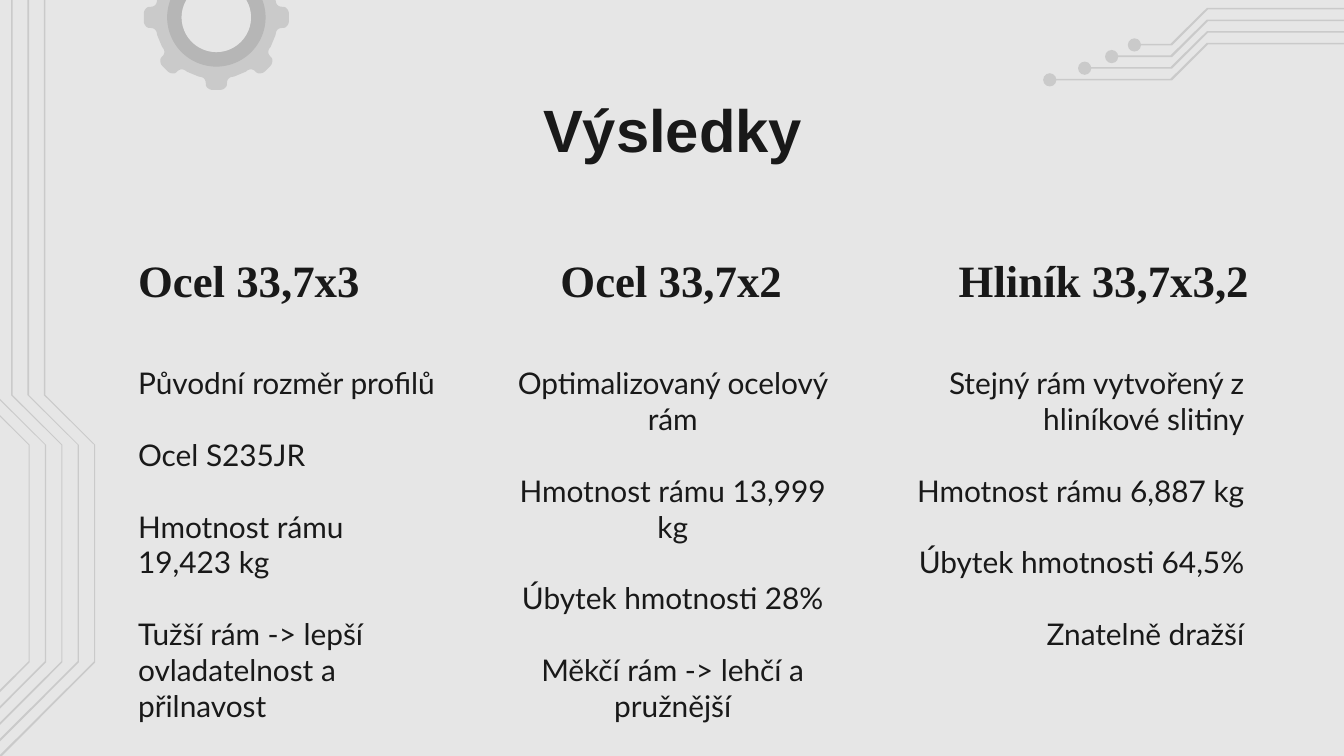
import math

import pptx
import pptx.dml.color
import pptx.enum.shapes
import pptx.enum.text
import pptx.oxml
import pptx.oxml.ns
import pptx.util

Cm, Pt = pptx.util.Cm, pptx.util.Pt
SHAPE = pptx.enum.shapes.MSO_SHAPE
ALIGN = pptx.enum.text.PP_ALIGN
ANCHOR = pptx.enum.text.MSO_ANCHOR

COLORS = {"background": "E6E6E6", "line": "CACACA", "ring": "B6B6B6", "text": "191919"}

# Content
TITLE = "Výsledky"
COLUMNS = [
    {"align": ALIGN.LEFT, "heading": "Ocel 33,7x3",
     "heading_x": (2.36, 6.17), "list_box": (2.36, 6.17, 6.96),
     "items": ["Původní rozměr profilů", "Ocel S235JR", "Hmotnost rámu 19,423 kg",
               "Tužší rám -> lepší ovladatelnost a přilnavost"]},
    {"align": ALIGN.CENTER, "heading": "Ocel 33,7x2",
     "heading_x": (9.6, 6.17), "list_box": (9.25, 6.93, 7.26),
     "items": ["Optimalizovaný ocelový rám", "Hmotnost rámu 13,999 kg",
               "Úbytek hmotnosti 28%", "Měkčí rám -> lehčí a pružnější"]},
    {"align": ALIGN.RIGHT, "heading": "Hliník 33,7x3,2",
     "heading_x": (16.84, 7.01), "list_box": (16.84, 6.93, 6.96),
     "items": ["Stejný rám vytvořený z hliníkové slitiny", "Hmotnost rámu 6,887 kg",
               "Úbytek hmotnosti 64,5%", "Znatelně dražší"]},
]
HEADING_Y, HEADING_H, LIST_Y = 3.96, 2.08, 6.65

# Circuit traces, in cm: start and end of each top trace, outline of the rightmost left trace
TOP_TRACES = [(21.44, 25.43), (21.01, 25.55), (20.5, 25.81), (19.84, 26.07)]
TOP_Y, TOP_STEP, DOT = 0.15, 0.22, 0.25
LEFT_TRACE = [(1.8, 8.41), (0.86, 7.47), (0.86, -6.15), (0.83, -6.15), (0.83, 7.47),
              (1.78, 8.41), (1.78, 12.5), (-0.33, 14.6), (-0.33, 19.76), (-0.3, 19.76),
              (-0.3, 14.63), (1.8, 12.52)]
LEFT_COUNT, LEFT_STEP = 5, 0.31

# Gear, in cm: Bézier curves of the left half of the top tooth, from the centre
GEAR_X, GEAR_Y, GEAR_TEETH, HOLE_R, RING_R = 4.09, 0.33, 8, 0.66, 0.93
HALF_TOOTH = [[(-0.33, -1.12), (-0.25, -1.12), (-0.2, -1.17), (-0.2, -1.24)],
              [(-0.2, -1.27), (-0.2, -1.32), (-0.13, -1.37), (-0.08, -1.37)]]


def rgb(name):
    return pptx.dml.color.RGBColor.from_string(COLORS[name])


def paint(sp, color):
    sp.shadow.inherit = False
    sp.fill.solid()
    sp.fill.fore_color.rgb = rgb(color)
    sp.line.fill.background()


def add_outline(shapes, contours, color):
    """Draw one filled shape from closed contours given in cm."""
    points = [[(Cm(x), Cm(y)) for x, y in contour] for contour in contours]
    builder = shapes.build_freeform(*points[0][0])
    builder.add_line_segments(points[0][1:], close=True)
    for contour in points[1:]:
        builder.move_to(*contour[0])
        builder.add_line_segments(contour[1:], close=True)
    paint(builder.convert_to_shape(), color)


def bezier(curve, steps=6):
    for i in range(steps + 1):
        t = i / steps
        weights = ((1 - t) ** 3, 3 * t * (1 - t) ** 2, 3 * t * t * (1 - t), t ** 3)
        yield tuple(sum(w * p[axis] for w, p in zip(weights, curve)) for axis in (0, 1))


def gear_contours():
    half = [point for curve in HALF_TOOTH for point in bezier(curve)]
    tooth = half + [(-x, y) for x, y in reversed(half)]
    outer = []
    for k in range(GEAR_TEETH):
        c, s = math.cos(math.tau * k / GEAR_TEETH), math.sin(math.tau * k / GEAR_TEETH)
        outer += [(GEAR_X + x * c - y * s, GEAR_Y + x * s + y * c) for x, y in tooth]
    angles = [-math.tau * k / 72 for k in range(72)]
    hole = [(GEAR_X + HOLE_R * math.cos(a), GEAR_Y + HOLE_R * math.sin(a)) for a in angles]
    return [outer, hole]


def fill_text(sp, box, lines, align, anchor, font, size, bold=False, gap=0):
    sp.left, sp.top, sp.width, sp.height = (Cm(v) for v in box)
    tf = sp.text_frame
    tf.word_wrap = True
    tf.auto_size = pptx.enum.text.MSO_AUTO_SIZE.NONE
    tf.vertical_anchor = anchor
    tf.margin_left = tf.margin_right = tf.margin_top = tf.margin_bottom = Cm(0.25)
    tf.text = "\n".join(lines)
    for i, p in enumerate(tf.paragraphs):
        pPr = p._p.get_or_add_pPr()
        pPr.set("marL", "0")
        pPr.set("indent", "0")
        pPr.append(pptx.oxml.parse_xml(f'<a:buNone {pptx.oxml.ns.nsdecls("a")}/>'))
        p.alignment = align
        p.space_before = Pt(gap if i else 0)
        for r in p.runs:
            r.font.name, r.font.size, r.font.bold = font, Pt(size), bold
            r.font.color.rgb = rgb("text")


def main():
    prs = pptx.Presentation()
    prs.slide_width, prs.slide_height = Cm(25.4), Cm(14.29)
    s = prs.slides.add_slide(prs.slide_layouts.get_by_name("Comparison"))
    s.background.fill.solid()
    s.background.fill.fore_color.rgb = rgb("background")

    # Top right traces with end dots
    for i, (start, end) in enumerate(TOP_TRACES):
        y = TOP_Y + i * TOP_STEP
        add_outline(s.shapes, [[(22.81, y), (22.12, y + 0.68), (start, y + 0.68),
                                (start, y + 0.71), (22.15, y + 0.71), (22.83, y + 0.03),
                                (end, y + 0.03), (end, y)]], "line")
        dot = s.shapes.add_shape(SHAPE.OVAL, Cm(start - DOT / 2), Cm(y + 0.7 - DOT / 2),
                                 Cm(DOT), Cm(DOT))
        paint(dot, "line")

    # Left traces
    for i in range(LEFT_COUNT):
        add_outline(s.shapes, [[(x - i * LEFT_STEP, y) for x, y in LEFT_TRACE]], "line")

    # Gear
    add_outline(s.shapes, gear_contours(), "line")
    ring = s.shapes.add_shape(SHAPE.DONUT, Cm(GEAR_X - RING_R), Cm(GEAR_Y - RING_R),
                              Cm(2 * RING_R), Cm(2 * RING_R))
    ring.adjustments[0] = (RING_R - HOLE_R) / (2 * RING_R)
    paint(ring, "ring")

    # Title
    fill_text(s.shapes.title, (2.01, 1.5, 21.41, 1.78), [TITLE], ALIGN.CENTER,
              ANCHOR.TOP, "Arial", 32, bold=True)

    # Columns: the layout holds two pairs, the third pair is text boxes
    ph = {p.placeholder_format.idx: p for p in s.placeholders}
    pairs = [(ph[1], ph[2]), (ph[3], ph[4]),
             tuple(s.shapes.add_textbox(0, 0, Cm(1), Cm(1)) for _ in range(2))]
    for column, (heading, body) in zip(COLUMNS, pairs):
        x, w = column["heading_x"]
        fill_text(heading, (x, HEADING_Y, w, HEADING_H), [column["heading"]],
                  column["align"], ANCHOR.BOTTOM, "Times New Roman", 24, bold=True)
        x, w, h = column["list_box"]
        fill_text(body, (x, LIST_Y, w, h), column["items"], column["align"],
                  ANCHOR.TOP, "Lato", 16, gap=19.2)

    # Footer placeholders stay out of the slide
    for idx in (10, 11, 12):
        if idx in ph:
            ph[idx].element.getparent().remove(ph[idx].element)

    prs.save("out.pptx")


if __name__ == "__main__":
    main()
